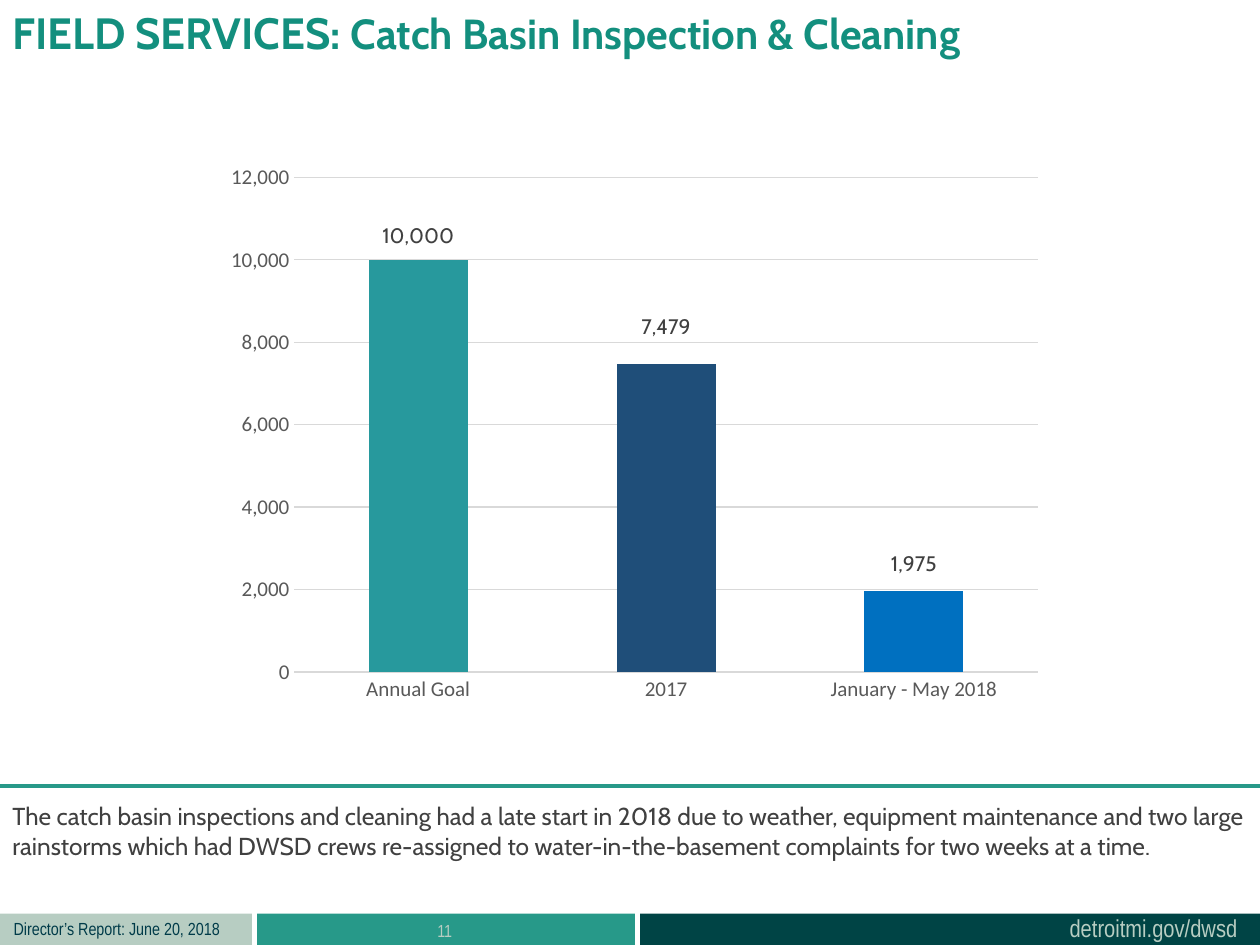
from typing import NamedTuple

from lxml import etree
from pptx import Presentation
from pptx import util as u
from pptx.chart.data import CategoryChartData
from pptx.dml.color import RGBColor
from pptx.enum import chart as ch, shapes, text
from pptx.oxml import parse_xml
from pptx.oxml.ns import nsdecls, qn

HUES = {
    "teal": "279989", "deep": "004445", "sage": "B7CDC2", "navy": "003B49",
    "title": "138F7E", "body": "404040", "axis": "595959", "grid": "D9D9D9",
    "goal": "27999D", "past": "1F4E79", "now": "0070C0",
}


class Run(NamedTuple):
    text: str
    size: int
    hue: str
    font: str = "Cabin"
    bold: bool = False


class Box(NamedTuple):
    left: float
    top: float
    wide: float
    high: float
    runs: list[Run]
    wrap: bool = True
    align: text.PP_ALIGN = text.PP_ALIGN.LEFT


class Band(NamedTuple):
    left: float
    wide: float
    hue: str


class Bar(NamedTuple):
    name: str
    value: int
    hue: str
    lift: float  # label offset from the bar's centre, as a share of chart height


BANDS = [Band(2.04, 3, "teal"), Band(5.08, 5, "deep"), Band(0, 2, "sage")]
BOXES = [
    Box(8.39, 7.2, 1.55, 0.34,
        [Run("detroitmi.gov/dwsd", 14, "sage", "Arial Narrow")], wrap=False),
    Box(0.01, 7.24, 1.84, 0.27,
        [Run("Director’s Report: June 20, 2018", 10, "navy", "Arial Narrow")], wrap=False),
    Box(2.03, 7.25, 3, 0.4,
        [Run("11", 10, "sage", "Arial Narrow")], align=text.PP_ALIGN.CENTER),
    Box(0, 0, 8.01, 0.77,
        [Run("FIELD SERVICES: ", 25, "title", bold=True),
         Run("Catch Basin Inspection & Cleaning", 24, "title", bold=True)]),
    Box(0, 6.31, 10, 0.57,
        [Run("The catch basin inspections and cleaning had a late start in 2018 due to "
             "weather, equipment maintenance and two large rainstorms which had DWSD "
             "crews re-assigned to water-in-the-basement complaints for two weeks at "
             "a time.", 14, "body")]),
]
BARS = [
    Bar("Annual Goal", 10000, "goal", -0.41),
    Bar("2017", 7479, "past", -0.34),
    Bar("January - May 2018", 1975, "now", -0.12),
]


def tint(name: str) -> RGBColor:
    return RGBColor.from_string(HUES[name])


def paint(fill, hue: str) -> None:
    fill.solid()
    fill.fore_color.rgb = tint(hue)


def style(font, size: int, hue: str, face: str, bold: bool = False) -> None:
    font.size, font.name, font.bold = u.Pt(size), face, bold
    font.color.rgb = tint(hue)


def add_band(slide, band: Band) -> None:
    rect = slide.shapes.add_shape(
        shapes.MSO_SHAPE.RECTANGLE, u.Inches(band.left), u.Inches(7.25),
        u.Inches(band.wide), u.Inches(0.25))
    rect.shadow.inherit = False
    paint(rect.fill, band.hue)
    rect.line.fill.background()


def add_box(slide, box: Box) -> None:
    frame = slide.shapes.add_textbox(
        *(u.Inches(n) for n in (box.left, box.top, box.wide, box.high))).text_frame
    frame.word_wrap = box.wrap
    para = frame.paragraphs[0]
    para.alignment = box.align
    for item in box.runs:
        run = para.add_run()
        run.text = item.text
        style(run.font, item.size, item.hue, item.font, item.bold)


def add_rule(slide) -> None:
    rule = slide.shapes.add_connector(
        shapes.MSO_CONNECTOR.STRAIGHT, u.Inches(10), u.Inches(6.24), u.Inches(0), u.Inches(6.24))
    rule.line.width = u.Pt(2.25)
    rule.line.color.rgb = tint("teal")
    etree.SubElement(rule._element.spPr, qn("a:effectLst"))


def lift_label(point, lift: float) -> None:
    """Move a stacked bar's label above the bar, where no preset position exists."""
    label = point.data_label
    style(label.font, 12, "body", "Cabin")
    node = label._dLbl
    node.find(qn("c:idx")).addnext(parse_xml(
        f'<c:layout {nsdecls("c")}><c:manualLayout><c:x val="0"/>'
        f'<c:y val="{lift}"/></c:manualLayout></c:layout>'))


def drop_leaders(series) -> None:
    """Turn off the lines that join moved labels to their bars."""
    labels = series.data_labels._element
    for node in labels.findall(qn("c:showLeaderLines")):
        labels.remove(node)
    etree.SubElement(labels, qn("c:showLeaderLines")).set("val", "0")


def add_bars(slide) -> None:
    data = CategoryChartData(number_format="#,##0")
    data.categories = [bar.name for bar in BARS]
    data.add_series("Series 1", [bar.value for bar in BARS])
    chart = slide.shapes.add_chart(
        ch.XL_CHART_TYPE.COLUMN_STACKED, u.Inches(1.7), u.Inches(1.22),
        u.Inches(6.67), u.Inches(4.44), data).chart
    chart.has_legend = chart.has_title = False
    chart.font.size, chart.font.name = u.Pt(10), "Calibri"

    cats, vals = chart.category_axis, chart.value_axis
    for axis in (cats, vals):
        axis.major_tick_mark = axis.minor_tick_mark = ch.XL_TICK_MARK.NONE
        style(axis.tick_labels.font, 12, "axis", "Calibri")
    vals.minimum_scale, vals.maximum_scale, vals.major_unit = 0, 12000, 2000
    vals.tick_labels.number_format = "#,##0"
    vals.tick_labels.number_format_is_linked = False
    vals.format.line.fill.background()
    for line in (cats.format.line, vals.major_gridlines.format.line):
        line.width = u.Pt(0.75)
        line.color.rgb = tint("grid")

    plot = chart.plots[0]
    plot.gap_width, plot.overlap, plot.vary_by_categories = 150, 100, False
    series = plot.series[0]
    paint(series.format.fill, "now")
    for i, bar in enumerate(BARS):
        point = series.points[i]
        paint(point.format.fill, bar.hue)
        lift_label(point, bar.lift)
    drop_leaders(series)


def main() -> None:
    deck = Presentation()
    deck.slide_width, deck.slide_height = u.Inches(10), u.Inches(7.5)
    slide = deck.slides.add_slide(deck.slide_layouts[6])
    for band in BANDS:
        add_band(slide, band)
    for box in BOXES:
        add_box(slide, box)
    add_rule(slide)
    add_bars(slide)
    deck.save("out.pptx")


if __name__ == "__main__":
    main()
